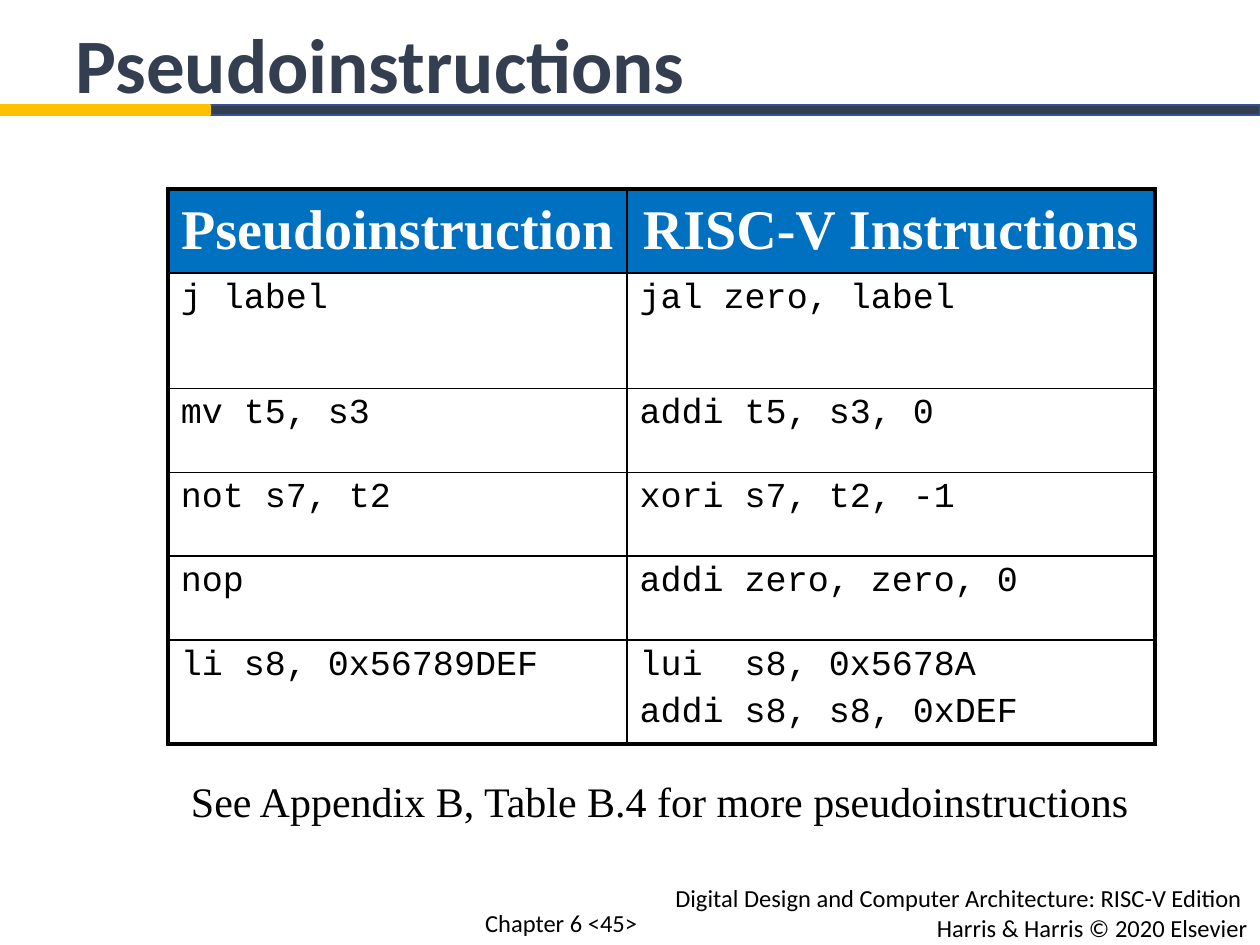
"""Build the slide on RISC-V pseudoinstructions."""
from lxml.etree import SubElement
from pptx import Presentation
from pptx.dml.color import RGBColor
from pptx.enum.shapes import MSO_SHAPE
from pptx.enum.text import MSO_ANCHOR, MSO_AUTO_SIZE, PP_ALIGN
from pptx.oxml.ns import qn
from pptx.util import Cm, Pt

COLORS = {
    "ink": "000000",
    "paper": "FFFFFF",
    "navy": "333F50",
    "navy_edge": "325491",
    "gold": "FFC000",
    "header": "0070C0",
}
INSTRUCTIONS = [
    ("Pseudoinstruction", "RISC-V Instructions"),
    ("j label", "jal zero, label"),
    ("mv t5, s3", "addi t5, s3, 0"),
    ("not s7, t2", "xori s7, t2, -1"),
    ("nop", "addi zero, zero, 0"),
    ("li s8, 0x56789DEF", "lui  s8, 0x5678A\naddi s8, s8, 0xDEF"),
]
COLUMN_WIDTHS = [9.25, 10.64]
ROW_HEIGHTS = [1.69, 2.33, 1.69, 1.69, 1.69, 2.1]


def color(name):
    return RGBColor.from_string(COLORS[name])


def write(frame, text, font="Calibri", size=14, ink="ink", bold=False,
          align=PP_ALIGN.LEFT, gap=0):
    for index, line in enumerate(text.split("\n")):
        paragraph = frame.add_paragraph() if index else frame.paragraphs[0]
        paragraph.alignment = align
        if index:
            paragraph.space_before = Pt(gap)
        span = paragraph.add_run()
        span.text = line
        span.font.name = font
        span.font.size = Pt(size)
        span.font.bold = bold
        span.font.color.rgb = color(ink)


def draw_borders(cell, widths):
    properties = cell._tc.get_or_add_tcPr()
    for index, (side, width) in enumerate(widths.items()):
        line = SubElement(properties, qn(f"a:ln{side}"), w=str(Pt(width)))
        fill = SubElement(line, qn("a:solidFill"))
        SubElement(fill, qn("a:srgbClr"), val=COLORS["ink"])
        properties.insert(index, line)


class SlideBuilder:
    def __init__(self, page):
        self.page = page
        self.serif = "Times New Roman"
        self.code = "Courier New"

    def title(self, text, left, top, width, height, indent):
        box = self.page.shapes.title
        box.left, box.top, box.width, box.height = map(Cm, (left, top, width, height))
        frame = box.text_frame
        frame.auto_size = MSO_AUTO_SIZE.NONE
        frame.vertical_anchor = MSO_ANCHOR.TOP
        frame.margin_left = Cm(indent)
        write(frame, text, size=44, ink="navy", bold=True)

    def bar(self, left, top, width, height, fill, edge):
        box = self.page.shapes.add_shape(
            MSO_SHAPE.RECTANGLE, Cm(left), Cm(top), Cm(width), Cm(height))
        box.shadow.inherit = False
        box.fill.solid()
        box.fill.fore_color.rgb = color(fill)
        box.line.color.rgb = color(edge)
        box.line.width = Pt(1)

    def label(self, text, left, top, width, height, wrap=True, **style):
        box = self.page.shapes.add_textbox(Cm(left), Cm(top), Cm(width), Cm(height))
        box.text_frame.word_wrap = wrap
        write(box.text_frame, text, **style)

    def table(self, rows, left, top, widths, heights):
        table = self.page.shapes.add_table(
            len(rows), len(widths), Cm(left), Cm(top),
            Cm(sum(widths)), Cm(sum(heights))).table
        table.horz_banding = False
        for column, width in zip(table.columns, widths):
            column.width = Cm(width)
        for row, height in zip(table.rows, heights):
            row.height = Cm(height)
        last_row, last_column = len(rows) - 1, len(widths) - 1
        for r, texts in enumerate(rows):
            for c, text in enumerate(texts):
                cell = table.cell(r, c)
                if r == 0:
                    cell.fill.solid()
                    cell.fill.fore_color.rgb = color("header")
                    cell.vertical_anchor = MSO_ANCHOR.MIDDLE
                    write(cell.text_frame, text, font=self.serif, size=32,
                          ink="paper", bold=True, align=PP_ALIGN.CENTER)
                else:
                    cell.fill.background()
                    write(cell.text_frame, text, font=self.code, size=20, gap=4)
                outer = {"L": c == 0, "R": c == last_column,
                         "T": r == 0, "B": r == last_row}
                draw_borders(cell, {side: 2.25 if edge else 1
                                    for side, edge in outer.items()})


def main():
    deck = Presentation()
    deck.slide_width, deck.slide_height = Cm(25.4), Cm(19.05)
    builder = SlideBuilder(deck.slides.add_slide(deck.slide_layouts[5]))
    builder.label("Digital Design and Computer Architecture: RISC-V Edition \n"
                  "Harris & Harris © 2020 Elsevier",
                  9.53, 17.68, 15.87, 1.45, align=PP_ALIGN.RIGHT)
    builder.label("Chapter 6 <45>", 9.53, 18.19, 4.01, 0.86)
    builder.bar(4.24, 2.12, 21.16, 0.2, "navy", "navy_edge")
    builder.bar(0, 2.12, 4.24, 0.2, "gold", "gold")
    builder.table(INSTRUCTIONS, 3.39, 3.81, COLUMN_WIDTHS, ROW_HEIGHTS)
    builder.title("Pseudoinstructions", 0, 0.2, 22.02, 2.13, indent=1.52)
    builder.label("See Appendix B, Table B.4 for more pseudoinstructions",
                  3.6, 15.5, 19.58, 1.27, wrap=False, font=builder.serif, size=24)
    deck.save("out.pptx")


if __name__ == "__main__":
    main()
